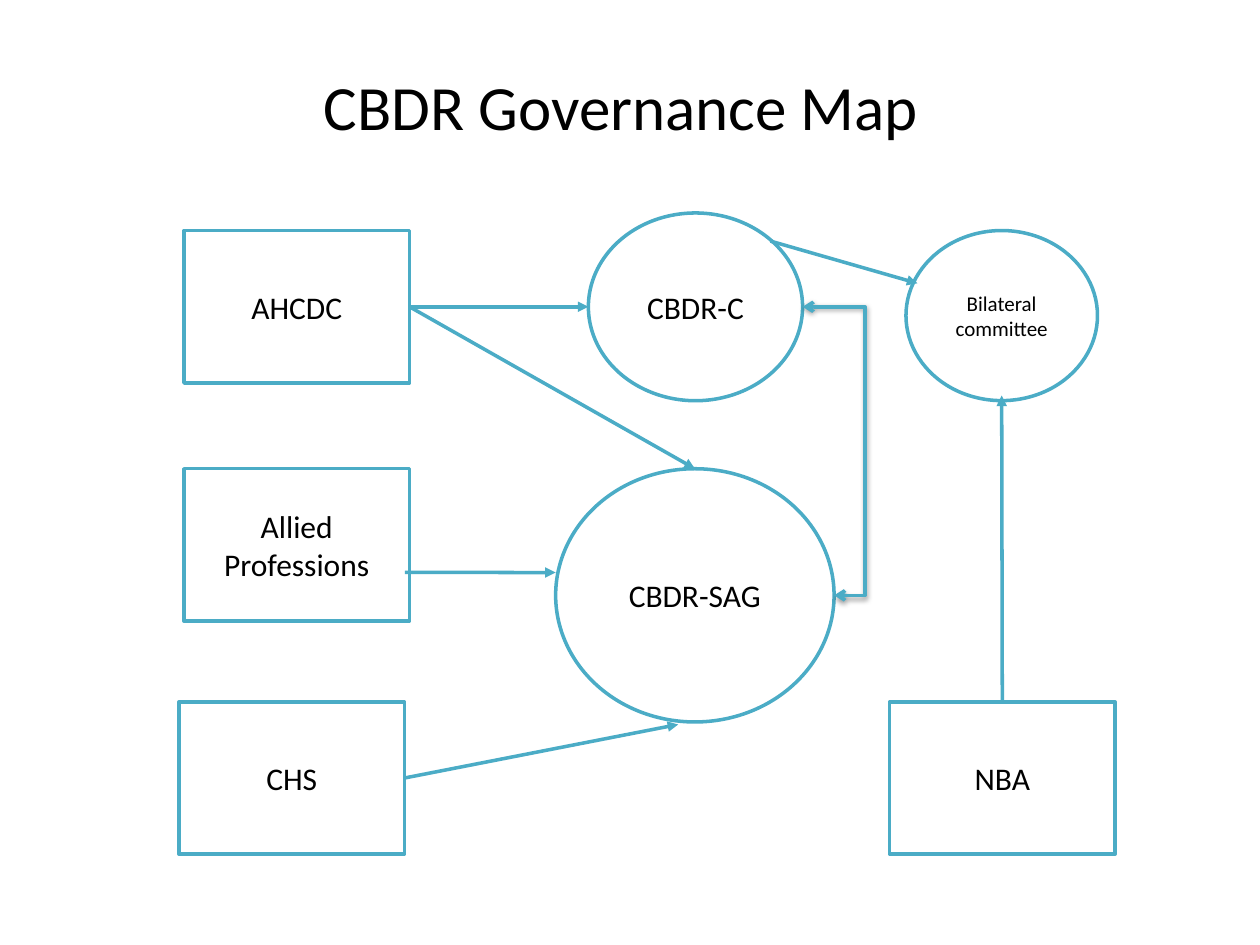
from lxml.etree import SubElement
from pptx import Presentation
from pptx.dml.color import RGBColor
from pptx.enum.shapes import MSO_CONNECTOR as LINK, MSO_SHAPE as FORM
from pptx.enum.text import MSO_ANCHOR as ANCHOR, PP_ALIGN as ALIGN
from pptx.oxml.ns import qn
from pptx.util import Inches, Pt

COLUMNS, ROWS = 100, 75
CELL = Inches(10) // COLUMNS
TEAL, WHITE, BLACK = "4BACC6", "FFFFFF", "000000"
BOX = (17.9, 12.1)
TOP, RIGHT, LEFT = (0.5, 0), (1, 0.5), (0, 0.5)
JOIN_SITES = {TOP: 0, LEFT: 1, (0.5, 1): 2, RIGHT: 3}

NODES = {
    "AHCDC": (FORM.RECTANGLE, (14.6, 18.3), BOX, 18),
    "Allied Professions": (FORM.RECTANGLE, (14.6, 37.2), BOX, 18),
    "CHS": (FORM.RECTANGLE, (14.2, 55.7), BOX, 18),
    "NBA": (FORM.RECTANGLE, (70.6, 55.7), BOX, 18),
    "CBDR-C": (FORM.OVAL, (46.7, 16.9), (17, 14.9), 18),
    "CBDR-SAG": (FORM.OVAL, (44.1, 37.2), (22.1, 20.1), 18),
    "Bilateral committee": (FORM.OVAL, (71.9, 18.3), (15.2, 13.5), 12),
}
REPORTS = [
    ("AHCDC", RIGHT, "CBDR-C", LEFT),
    ("AHCDC", RIGHT, "CBDR-SAG", TOP),
    ("Allied Professions", (0.98, 0.68), "CBDR-SAG", (0, 0.41)),
    ("CHS", RIGHT, "CBDR-SAG", (0.44, 1.01)),
    ("NBA", TOP, "Bilateral committee", (0.5, 0.97)),
    ("CBDR-C", (0.85, 0.15), "Bilateral committee", (0.06, 0.31)),
]


def color(hex_value):
    return RGBColor.from_string(hex_value)


def grid(*cells):
    return [round(cell * CELL) for cell in cells]


def apply(target, formats):
    for name, value in formats.items():
        setattr(target, name, value)


def write(frame, words, size):
    apply(frame, {"word_wrap": True, "vertical_anchor": ANCHOR.MIDDLE})
    paragraph = frame.paragraphs[0]
    paragraph.alignment = ALIGN.CENTER
    run = paragraph.add_run()
    run.text = words
    apply(run.font, {"name": "Calibri", "size": Pt(size)})
    run.font.color.rgb = color(BLACK)


def outline(line):
    line.color.rgb = color(TEAL)
    line.width = Pt(2)


def add_title(slide, words):
    title = slide.shapes.add_textbox(*grid(4.3, 2.1, 90, 12.5))
    write(title.text_frame, words, 36)


def add_node(slide, words, form, corner, extent, size):
    node = slide.shapes.add_shape(form, *grid(*corner, *extent))
    node.shadow.inherit = False
    node.fill.solid()
    node.fill.fore_color.rgb = color(WHITE)
    outline(node.line)
    write(node.text_frame, words, size)
    return node


def point_on(node, share):
    across, down = share
    return round(node.left + across * node.width), round(node.top + down * node.height)


def add_link(slide, kind, source, start, target, finish, arrows):
    link = slide.shapes.add_connector(
        kind, *point_on(source, start), *point_on(target, finish))
    if source.auto_shape_type == FORM.RECTANGLE and start in JOIN_SITES:
        link.begin_connect(source, JOIN_SITES[start])
    outline(link.line)
    properties = link._element.spPr
    stroke = properties.find(qn("a:ln"))
    for end, style in arrows.items():
        SubElement(stroke, qn(end), type=style)
    effects = SubElement(properties, qn("a:effectLst"))
    return properties, effects


def add_exchange(slide, source, target):
    properties, effects = add_link(
        slide, LINK.ELBOW, source, RIGHT, target, RIGHT,
        {"a:headEnd": "arrow", "a:tailEnd": "arrow"})
    bends = properties.find(qn("a:prstGeom")).find(qn("a:avLst"))
    SubElement(bends, qn("a:gd"), name="adj1", fmla="val 198500")
    shadow = SubElement(
        effects, qn("a:outerShdw"), blurRad=str(Pt(3.1)), dist=str(Pt(1.6)),
        dir="5400000", rotWithShape="0")
    shade = SubElement(shadow, qn("a:srgbClr"), val=BLACK)
    SubElement(shade, qn("a:alpha"), val="38000")


def main():
    deck = Presentation()
    apply(deck, {"slide_width": COLUMNS * CELL, "slide_height": ROWS * CELL})
    slide = deck.slides.add_slide(deck.slide_layouts[6])
    add_title(slide, "CBDR Governance Map")
    nodes = {words: add_node(slide, words, *layout) for words, layout in NODES.items()}
    for source, start, target, finish in REPORTS:
        add_link(slide, LINK.STRAIGHT, nodes[source], start, nodes[target], finish,
                 {"a:tailEnd": "triangle"})
    add_exchange(slide, nodes["CBDR-C"], nodes["CBDR-SAG"])
    deck.save("out.pptx")


if __name__ == "__main__":
    main()
